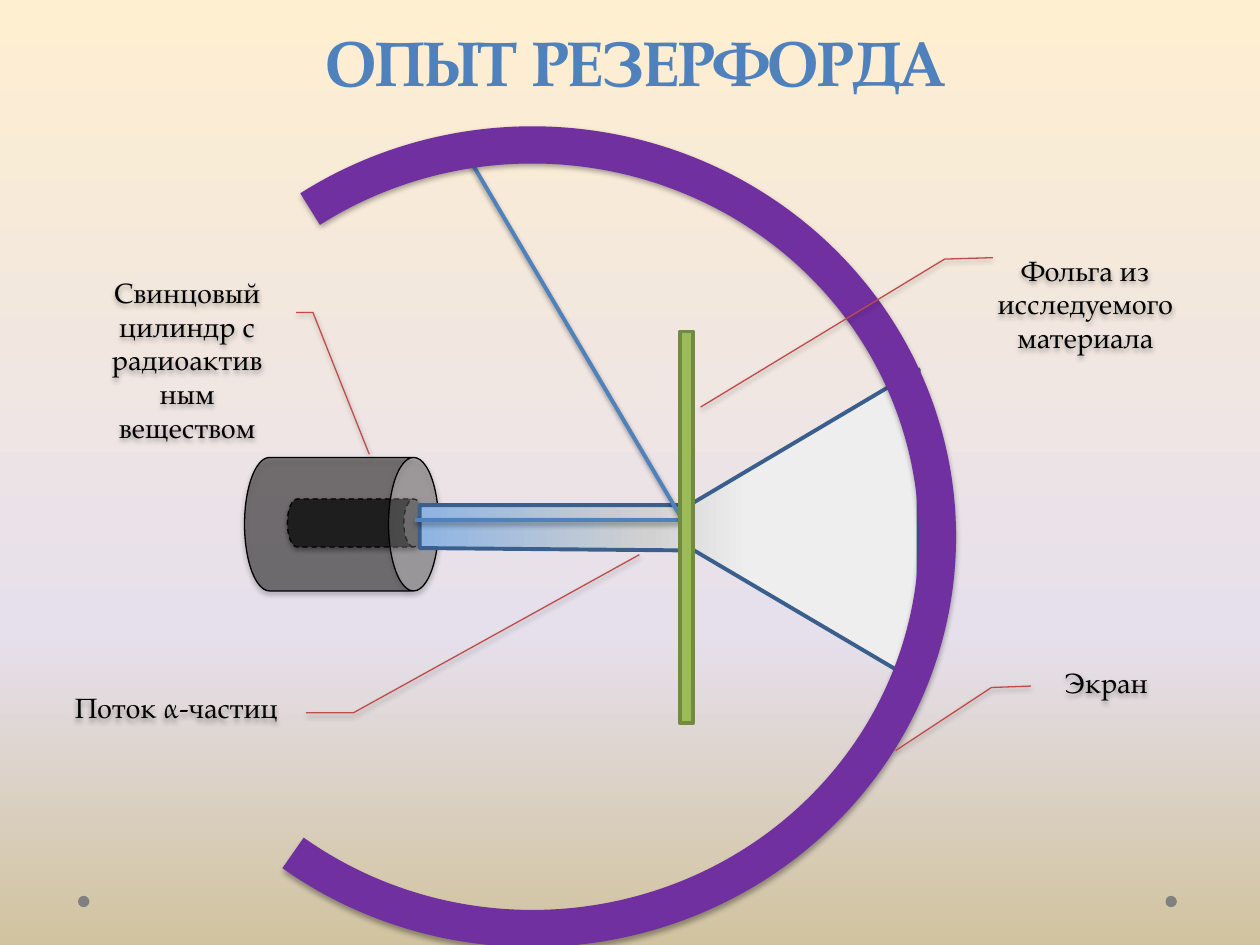
from dataclasses import dataclass
from typing import Optional

import lxml.etree
import pptx
import pptx.dml.color
import pptx.enum.dml
import pptx.enum.shapes
import pptx.enum.text
import pptx.oxml.ns
import pptx.util

Pt = pptx.util.Pt
RGBColor = pptx.dml.color.RGBColor
Shape = pptx.enum.shapes.MSO_SHAPE
Anchor = pptx.enum.text.MSO_ANCHOR
qn = pptx.oxml.ns.qn

FONT = "TeX Gyre Pagella"
BLACK = RGBColor(0x00, 0x00, 0x00)
CHARCOAL = RGBColor(0x40, 0x40, 0x40)
GREY = RGBColor(0x80, 0x80, 0x80)
BLUE = RGBColor(0x4F, 0x81, 0xBD)
DARK_BLUE = RGBColor(0x3A, 0x5F, 0x8C)
PURPLE = RGBColor(0x70, 0x30, 0xA0)
GREEN = RGBColor(0x9B, 0xBB, 0x59)
DARK_GREEN = RGBColor(0x73, 0x8A, 0x42)
RED = RGBColor(0xBF, 0x4C, 0x48)
CREAM = RGBColor(0xFF, 0xEF, 0xD1)
LILAC = RGBColor(0xE6, 0xE0, 0xEC)
SAND = RGBColor(0xD1, 0xC3, 0x9F)
SKY = RGBColor(0x8E, 0xB4, 0xE3)
SILVER = RGBColor(0xD1, 0xD1, 0xD1)
PALE = RGBColor(0xEE, 0xEE, 0xEE)


@dataclass(frozen=True)
class Part:
    kind: Shape
    box: tuple[float, float, float, float]
    fill: Optional[RGBColor] = None
    line: Optional[RGBColor] = None
    weight: float = 0.75
    rotation: float = 0
    adjustments: tuple[float, ...] = ()
    opacity: int = 100
    dashed: bool = False
    shadow: int = 0


@dataclass(frozen=True)
class Label:
    text: str
    box: tuple[float, float, float, float]
    leader: tuple[float, ...]
    anchor: Anchor = Anchor.MIDDLE


DOTS = [Part(Shape.OVAL, (left, 511.9, 6.5, 6.5), GREY) for left in (44.6, 666)]
CYLINDER = [
    Part(Shape.CAN, (189.4, 259.9, 27.4, 77.8), CHARCOAL, BLACK, rotation=90,
         adjustments=(0.41,), dashed=True, shadow=38),
    Part(Shape.CAN, (157, 244.1, 76.3, 110.9), BLACK, BLACK, rotation=90,
         adjustments=(0.375,), opacity=43, shadow=38),
]
SCREEN = Part(Shape.ARC, (72.7, 82.8, 463, 447.8), line=PURPLE, weight=21.25,
              adjustments=(141.51, 76.27), shadow=35)
FOIL = Part(Shape.RECTANGLE, (388.8, 189.4, 7.2, 223.9), GREEN, DARK_GREEN, 2.25)
BEAM = [(239.8, 288.7), (393.8, 288.7), (524.9, 211), (524.9, 390.2),
        (396.7, 314.6), (239.8, 313.2)]
RAYS = [((236.9, 297.4), (391.7, 297.4)), ((390.2, 297.4), (263.5, 82.8))]
LABELS = [
    Label("Свинцовый цилиндр с радиоактивным веществом", (53.3, 162, 107.3, 87.1),
          (0.19, 1.08, 0.19, 1.17, 1.12, 1.47)),
    Label("Фольга из исследуемого материала", (560.2, 132.5, 120.2, 82.1),
          (0.18, 0.06, 0.19, -0.17, 1.22, -1.33)),
    Label("Экран", (583.2, 377.3, 97.9, 82.1),
          (0.18, 0.06, 0.19, -0.17, 0.63, -0.73), Anchor.TOP),
    Label("Поток α-частиц", (25.2, 391.7, 151.2, 82.1),
          (0.19, 0.99, 0.19, 1.17, -0.91, 2.25), Anchor.TOP),
]


def add_alpha(color_element, percent: int) -> None:
    lxml.etree.SubElement(color_element, qn("a:alpha"), val=str(percent * 1000))


def set_shadow(item, opacity: int) -> None:
    effects = lxml.etree.SubElement(item._element.spPr, qn("a:effectLst"))
    if opacity:
        shadow = lxml.etree.SubElement(
            effects, qn("a:outerShdw"), blurRad=str(Pt(3.1)), dist=str(Pt(1.6)),
            dir="5400000", rotWithShape="0")
        add_alpha(lxml.etree.SubElement(shadow, qn("a:srgbClr"), val=str(BLACK)), opacity)


def set_gradient(fill, owner, stops: list[tuple[int, RGBColor]], angle: float) -> None:
    fill.gradient()
    fill.gradient_angle = angle
    stop_list = next(owner.iter(qn("a:gsLst")))
    for stop in list(stop_list):
        stop_list.remove(stop)
    for position, color in stops:
        stop = lxml.etree.SubElement(stop_list, qn("a:gs"), pos=str(position * 1000))
        lxml.etree.SubElement(stop, qn("a:srgbClr"), val=str(color))


def write_text(frame, text: str, *, size: float, color: RGBColor, bold: bool = False,
               wrap: bool = True, anchor: Anchor = Anchor.MIDDLE) -> None:
    frame.word_wrap = wrap
    frame.auto_size = pptx.enum.text.MSO_AUTO_SIZE.NONE
    frame.vertical_anchor = anchor
    frame.margin_top = frame.margin_bottom = Pt(3)
    paragraph = frame.paragraphs[0]
    paragraph.alignment = pptx.enum.text.PP_ALIGN.CENTER
    run = paragraph.add_run()
    run.text = text
    run.font.name = FONT
    run.font.size = Pt(size)
    run.font.bold = bold
    run.font.color.rgb = color


def draw_part(shapes, part: Part):
    drawn = shapes.add_shape(part.kind, *map(Pt, part.box))
    drawn.rotation = part.rotation
    for index, value in enumerate(part.adjustments):
        drawn.adjustments[index] = value
    if part.fill is None:
        drawn.fill.background()
    else:
        drawn.fill.solid()
        drawn.fill.fore_color.rgb = part.fill
        if part.opacity < 100:
            add_alpha(next(drawn._element.spPr.iter(qn("a:srgbClr"))), part.opacity)
    if part.line is None:
        drawn.line.fill.background()
    else:
        drawn.line.color.rgb = part.line
        drawn.line.width = Pt(part.weight)
    if part.dashed:
        drawn.line.dash_style = pptx.enum.dml.MSO_LINE.DASH
    set_shadow(drawn, part.shadow)
    return drawn


def draw_beam(shapes) -> None:
    corners = [(Pt(x), Pt(y)) for x, y in BEAM]
    builder = shapes.build_freeform(*corners[0])
    builder.add_line_segments(corners[1:], close=True)
    beam = builder.convert_to_shape()
    set_gradient(beam.fill, beam._element, [(0, SKY), (46, SILVER), (66, PALE)], 0)
    beam.line.color.rgb = DARK_BLUE
    beam.line.width = Pt(2.25)
    set_shadow(beam, 0)


def draw_ray(shapes, start: tuple[float, float], end: tuple[float, float]) -> None:
    ray = shapes.add_connector(pptx.enum.shapes.MSO_CONNECTOR.STRAIGHT,
                               *map(Pt, start + end))
    ray.line.color.rgb = BLUE
    ray.line.width = Pt(2.25)
    set_shadow(ray, 38)


def draw_label(shapes, label: Label) -> None:
    callout = draw_part(shapes, Part(Shape.LINE_CALLOUT_2_NO_BORDER, label.box,
                                     line=RED, adjustments=label.leader, shadow=35))
    write_text(callout.text_frame, label.text, size=16, color=BLACK, anchor=label.anchor)


def main() -> None:
    presentation = pptx.Presentation()
    presentation.slide_width, presentation.slide_height = Pt(720), Pt(540)
    slide = presentation.slides.add_slide(presentation.slide_layouts[5])
    set_gradient(slide.background.fill, slide._element,
                 [(0, CREAM), (67, LILAC), (100, SAND)], 270)
    shapes = slide.shapes

    title = shapes.title
    title.left, title.top, title.width, title.height = map(Pt, (164.9, 9.4, 396, 51.1))
    write_text(title.text_frame, "ОПЫТ РЕЗЕРФОРДА", size=36, color=BLUE, bold=True, wrap=False)

    for dot in DOTS:
        draw_part(shapes, dot)
    cylinder = shapes.add_group_shape()
    for can in CYLINDER:
        draw_part(cylinder.shapes, can)
    draw_beam(shapes)
    for start, end in RAYS:
        draw_ray(shapes, start, end)
    draw_part(shapes, SCREEN)
    draw_part(shapes, FOIL)
    for label in LABELS:
        draw_label(shapes, label)

    presentation.save("out.pptx")


if __name__ == "__main__":
    main()
